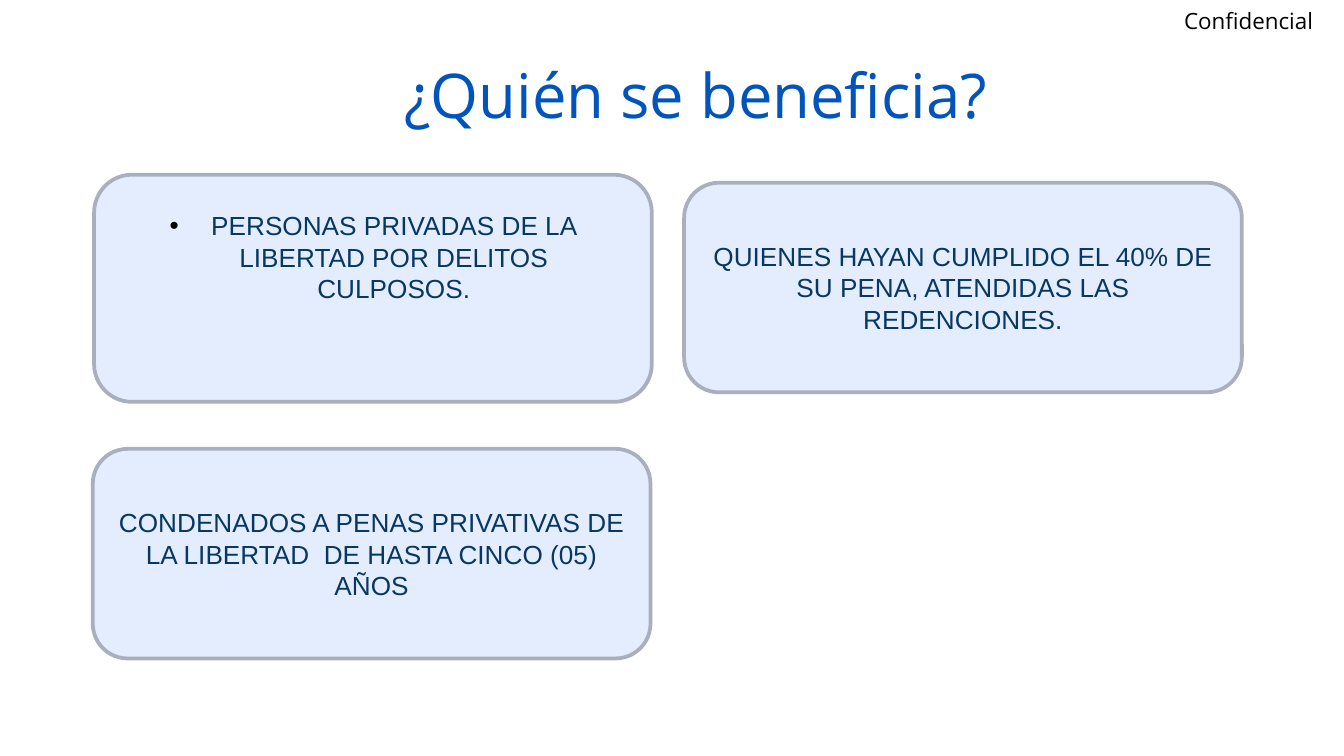
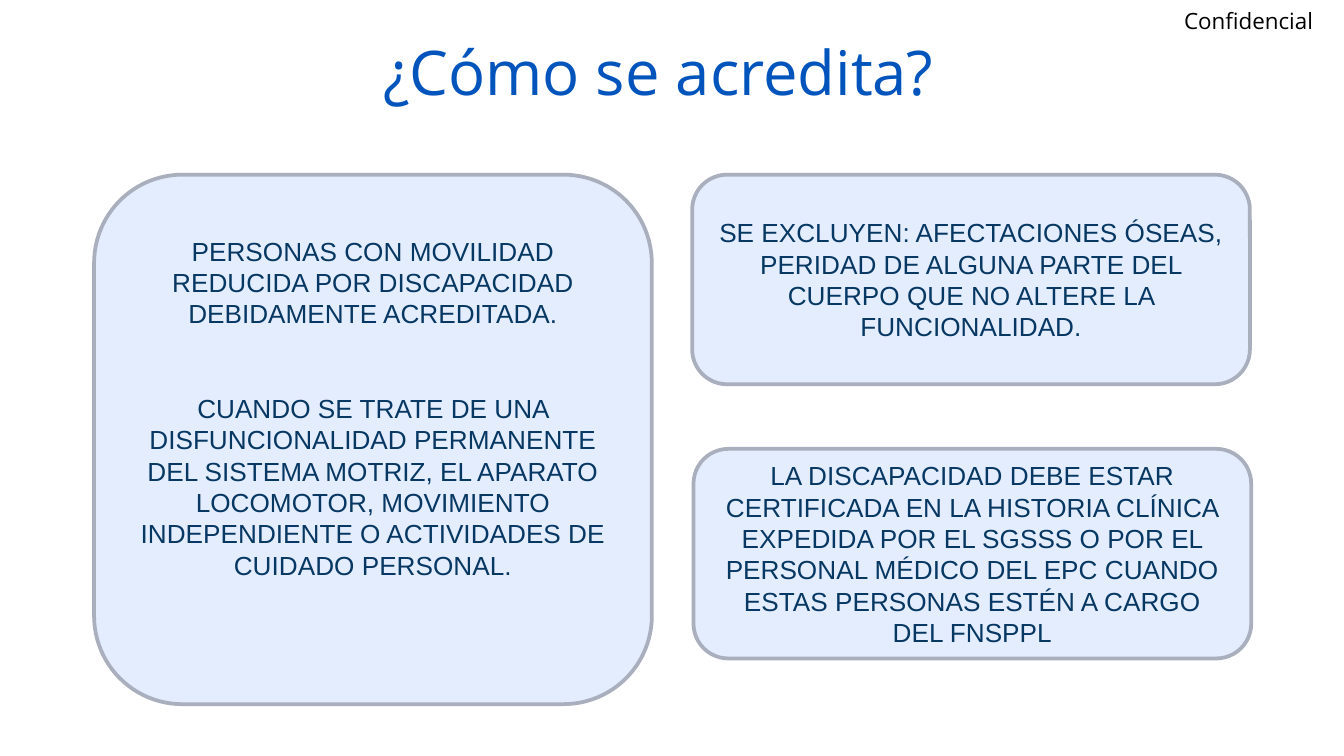
from dataclasses import dataclass

from lxml.etree import SubElement
from pptx import Presentation
from pptx.dml.color import RGBColor
from pptx.enum.shapes import MSO_SHAPE
from pptx.enum.text import MSO_ANCHOR, MSO_AUTO_SIZE, PP_ALIGN
from pptx.oxml.ns import qn
from pptx.util import Inches, Pt


@dataclass(frozen=True)
class Theme:
    title_color: str = "0054BC"
    label_color: str = "000000"
    body_color: str = "073763"
    card_fill: str = "E4EDFE"
    card_line: str = "A9AFBC"
    title_font: str = "Open Sans"
    body_font: str = "Arial"
    title_size: int = 33
    label_size: int = 12
    body_size: int = 14
    card_line_width: int = 2


THEME = Theme()
SLIDE_WIDTH = Inches(10)
SLIDE_HEIGHT = SLIDE_WIDTH * 9 // 16
CARD_WIDTH, CARD_HEIGHT = 4.15, 1.56
LEFT, TOP_ROW, BOTTOM_ROW = 0.7, 1.3, 3.34
TWO_LINES = 0.47
TITLE_LINE = 0.56


def add_bullet(paragraph, color):
    properties = paragraph._p.get_or_add_pPr()
    properties.set("marL", str(Inches(0.31)))
    properties.set("indent", str(Inches(-0.31)))
    bullet_color = SubElement(properties, qn("a:buClr"))
    SubElement(bullet_color, qn("a:srgbClr")).set("val", color)
    SubElement(properties, qn("a:buFont")).set("typeface", "Arial")
    SubElement(properties, qn("a:buChar")).set("char", "•")


def write(frame, *texts, font, size, color, align=PP_ALIGN.LEFT, line_spacing=None,
          gap=0, bullet=False, margins=(0.1, 0.05), extra_bottom=0):
    side, edge = margins
    frame.word_wrap = True
    frame.auto_size = MSO_AUTO_SIZE.NONE
    frame.vertical_anchor = MSO_ANCHOR.MIDDLE
    frame.margin_left = frame.margin_right = Inches(side)
    frame.margin_top = Inches(edge)
    frame.margin_bottom = Inches(edge + extra_bottom)
    for index, text in enumerate(texts):
        paragraph = frame.add_paragraph() if index else frame.paragraphs[0]
        paragraph.alignment = align
        if line_spacing:
            paragraph.line_spacing = line_spacing
        if index:
            paragraph.space_before = Inches(gap)
        if bullet:
            add_bullet(paragraph, THEME.label_color)
        run = paragraph.add_run()
        run.text = text
        run.font.name = font
        run.font.size = Pt(size)
        run.font.color.rgb = RGBColor.from_string(color)


class Deck:
    """Builds the slides with one theme and keeps track of the current one."""

    def __init__(self, theme):
        self.theme = theme
        self.presentation = Presentation()
        self.presentation.slide_width = SLIDE_WIDTH
        self.presentation.slide_height = SLIDE_HEIGHT
        self.layout = self.presentation.slide_layouts.get_by_name("Title Only")
        self.slide = None

    def place(self, shape, left, top, width, height):
        shape.left, shape.top = Inches(left), Inches(top)
        shape.width, shape.height = Inches(width), Inches(height)

    def start(self, title, left, top):
        self.slide = self.presentation.slides.add_slide(self.layout)
        heading = self.slide.shapes.title
        self.place(heading, left, top, 6.54, 1.09)
        write(heading.text_frame, title, font=self.theme.title_font,
              size=self.theme.title_size, color=self.theme.title_color,
              line_spacing=0.9, margins=(0.07, 0.04), extra_bottom=TITLE_LINE)

    def share_label(self, text):
        label = self.slide.shapes.add_textbox(
            Inches(8.74), Inches(0.01), Inches(1.26), Inches(0.31))
        write(label.text_frame, text, font=self.theme.title_font,
              size=self.theme.label_size, color=self.theme.label_color,
              line_spacing=0.9, margins=(0.07, 0.04))
        label.element.nvSpPr.cNvPr.set("id", "99")
        self.layout.shapes.element.append(label.element)

    def card(self, *texts, left, top, height=CARD_HEIGHT, **text_format):
        card = self.slide.shapes.add_shape(
            MSO_SHAPE.ROUNDED_RECTANGLE, Inches(left), Inches(top),
            Inches(CARD_WIDTH), Inches(height))
        card.shadow.inherit = False
        card.fill.solid()
        card.fill.fore_color.rgb = RGBColor.from_string(self.theme.card_fill)
        card.line.color.rgb = RGBColor.from_string(self.theme.card_line)
        card.line.width = Pt(self.theme.card_line_width)
        write(card.text_frame, *texts, font=self.theme.body_font,
              size=self.theme.body_size, color=self.theme.body_color,
              align=PP_ALIGN.CENTER, **text_format)


def build_beneficiaries(deck):
    deck.start("¿Quién se beneficia?", left=2.94, top=0.47)
    deck.share_label("Confidencial")
    deck.card("PERSONAS PRIVADAS DE LA LIBERTAD POR DELITOS CULPOSOS.",
              left=LEFT, top=TOP_ROW, height=1.69, bullet=True,
              extra_bottom=TWO_LINES)
    deck.card("CONDENADOS A PENAS PRIVATIVAS DE LA LIBERTAD  DE HASTA CINCO (05) AÑOS",
              left=0.69, top=BOTTOM_ROW)
    deck.card("QUIENES HAYAN CUMPLIDO EL 40% DE SU PENA, ATENDIDAS LAS REDENCIONES.",
              left=5.09, top=1.36)


def build_accreditation(deck):
    deck.start("¿Cómo se acredita?", left=2.78, top=0.3)
    deck.card("PERSONAS CON MOVILIDAD REDUCIDA POR DISCAPACIDAD DEBIDAMENTE ACREDITADA.",
              "CUANDO SE TRATE DE UNA DISFUNCIONALIDAD PERMANENTE DEL SISTEMA MOTRIZ, "
              "EL APARATO LOCOMOTOR, MOVIMIENTO INDEPENDIENTE O ACTIVIDADES DE "
              "CUIDADO PERSONAL.",
              left=LEFT, top=TOP_ROW, height=3.94, gap=TWO_LINES,
              extra_bottom=TWO_LINES)
    deck.card("SE EXCLUYEN: AFECTACIONES ÓSEAS, PERIDAD DE ALGUNA PARTE DEL CUERPO "
              "QUE NO ALTERE LA FUNCIONALIDAD.",
              left=5.15, top=TOP_ROW)
    deck.card("LA DISCAPACIDAD DEBE ESTAR CERTIFICADA EN LA HISTORIA CLÍNICA EXPEDIDA "
              "POR EL SGSSS O POR EL PERSONAL MÉDICO DEL EPC CUANDO ESTAS PERSONAS "
              "ESTÉN A CARGO DEL FNSPPL",
              left=5.16, top=BOTTOM_ROW)


def main():
    deck = Deck(THEME)
    build_beneficiaries(deck)
    build_accreditation(deck)
    deck.presentation.save("out.pptx")


if __name__ == "__main__":
    main()
